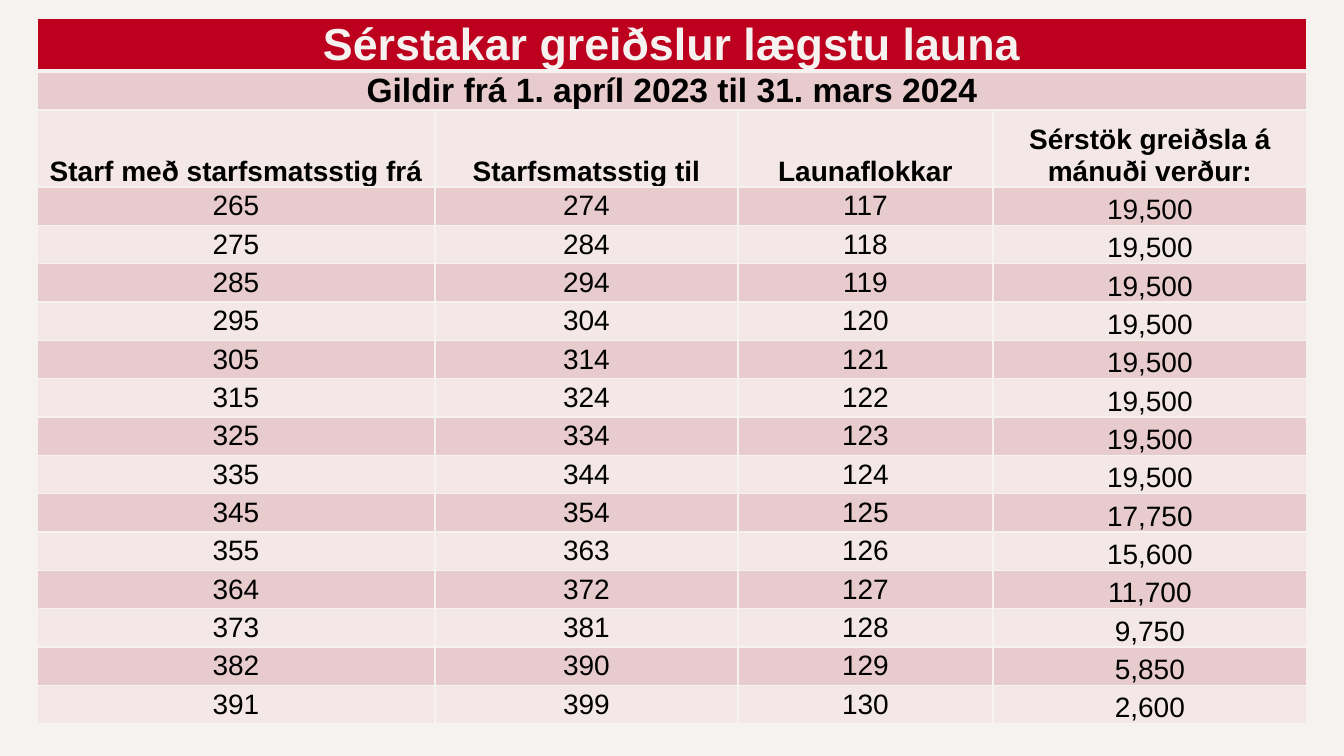
from pptx import Presentation
from pptx.dml.color import RGBColor
from pptx.enum.text import MSO_ANCHOR, PP_ALIGN
from pptx.oxml.ns import qn
from pptx.util import Emu, Pt
from lxml import etree

MIDDLE, BOTTOM = MSO_ANCHOR.MIDDLE, MSO_ANCHOR.BOTTOM
CENTER = PP_ALIGN.CENTER

CREAM = RGBColor(0xF5, 0xF2, 0xF0)
RED = RGBColor(0xBD, 0x00, 0x1D)
BLACK = RGBColor(0x00, 0x00, 0x00)
BANDS = (RGBColor(0xF4, 0xE7, 0xE8), RGBColor(0xE8, 0xCC, 0xCD))

EMU_PER_PX = 12192000 / 1344

TITLE = "Sérstakar greiðslur lægstu launa"
PERIOD = "Gildir frá 1. apríl 2023 til 31. mars 2024"
HEADINGS = ("Starf með starfsmatsstig frá", "Starfsmatsstig til",
            "Launaflokkar", "Sérstök greiðsla á mánuði verður:")
PAYMENTS = (
    ("265", "274", "117", "19,500"),
    ("275", "284", "118", "19,500"),
    ("285", "294", "119", "19,500"),
    ("295", "304", "120", "19,500"),
    ("305", "314", "121", "19,500"),
    ("315", "324", "122", "19,500"),
    ("325", "334", "123", "19,500"),
    ("335", "344", "124", "19,500"),
    ("345", "354", "125", "17,750"),
    ("355", "363", "126", "15,600"),
    ("364", "372", "127", "11,700"),
    ("373", "381", "128", "9,750"),
    ("382", "390", "129", "5,850"),
    ("391", "399", "130", "2,600"),
)


def px(n):
    return Emu(round(n * EMU_PER_PX))


class Deck:
    font = "Arial"

    def __init__(self, width, height):
        self.prs = Presentation()
        self.prs.slide_width, self.prs.slide_height = px(width), px(height)

    def add_slide(self, color):
        self.slide = self.prs.slides.add_slide(self.prs.slide_layouts[6])
        fill = self.slide.background.fill
        fill.solid()
        fill.fore_color.rgb = color

    def table(self, left, top, widths, head_heights, body_height, body_rows):
        n_rows = len(head_heights) + body_rows
        frame = self.slide.shapes.add_table(
            n_rows, len(widths), px(left), px(top),
            px(sum(widths)), px(sum(head_heights) + body_height))
        tbl = frame.table
        tbl.first_row = tbl.horz_banding = False
        for col, width in zip(tbl.columns, widths):
            col.width = px(width)
        heights = list(head_heights) + [body_height / body_rows] * body_rows
        for row, height in zip(tbl.rows, heights):
            row.height = px(height)
        return tbl

    def borders(self, cell, top=1, bottom=1):
        tc_pr = cell._tc.get_or_add_tcPr()
        for side, points in (("L", 1), ("R", 1), ("T", top), ("B", bottom)):
            ln = etree.SubElement(tc_pr, qn("a:ln" + side), w=str(Pt(points)))
            fill = etree.SubElement(ln, qn("a:solidFill"))
            etree.SubElement(fill, qn("a:srgbClr"), val=str(CREAM))

    def cell_fill(self, cell, color):
        cell.fill.solid()
        cell.fill.fore_color.rgb = color

    def cell_text(self, cell, text, size, bold, color=BLACK, anchor=BOTTOM):
        cell.vertical_anchor = anchor
        cell.margin_left = cell.margin_right = px(5)
        cell.margin_top = cell.margin_bottom = 0
        p = cell.text_frame.paragraphs[0]
        p.text = text
        p.alignment = CENTER
        font = p.runs[0].font
        font.name, font.size, font.bold = self.font, Pt(size), bold
        font.color.rgb = color


def main():
    deck = Deck(1344, 756)
    deck.add_slide(CREAM)
    tbl = deck.table(37, 18, (398, 303, 255, 314), (53, 39, 77), 537, len(PAYMENTS))

    # Borders and banded fills, with a thick rule under the title row
    for i, row in enumerate(tbl.rows):
        for cell in row.cells:
            deck.borders(cell, top=3 if i == 1 else 1, bottom=3 if i == 0 else 1)
            deck.cell_fill(cell, RED if i == 0 else BANDS[i % 2])

    # Title and period across all columns
    for i in (0, 1):
        tbl.cell(i, 0).merge(tbl.cell(i, 3))
    deck.cell_text(tbl.cell(0, 0), TITLE, 32, True, CREAM, MIDDLE)
    deck.cell_text(tbl.cell(1, 0), PERIOD, 24, True)

    # Column headings
    for j, heading in enumerate(HEADINGS):
        deck.cell_text(tbl.cell(2, j), heading, 20, True)

    # Payments
    for i, payment in enumerate(PAYMENTS, start=3):
        for j, value in enumerate(payment):
            deck.cell_text(tbl.cell(i, j), value, 20, False,
                           anchor=BOTTOM if j == 3 else MIDDLE)

    deck.prs.save("out.pptx")


if __name__ == "__main__":
    main()
